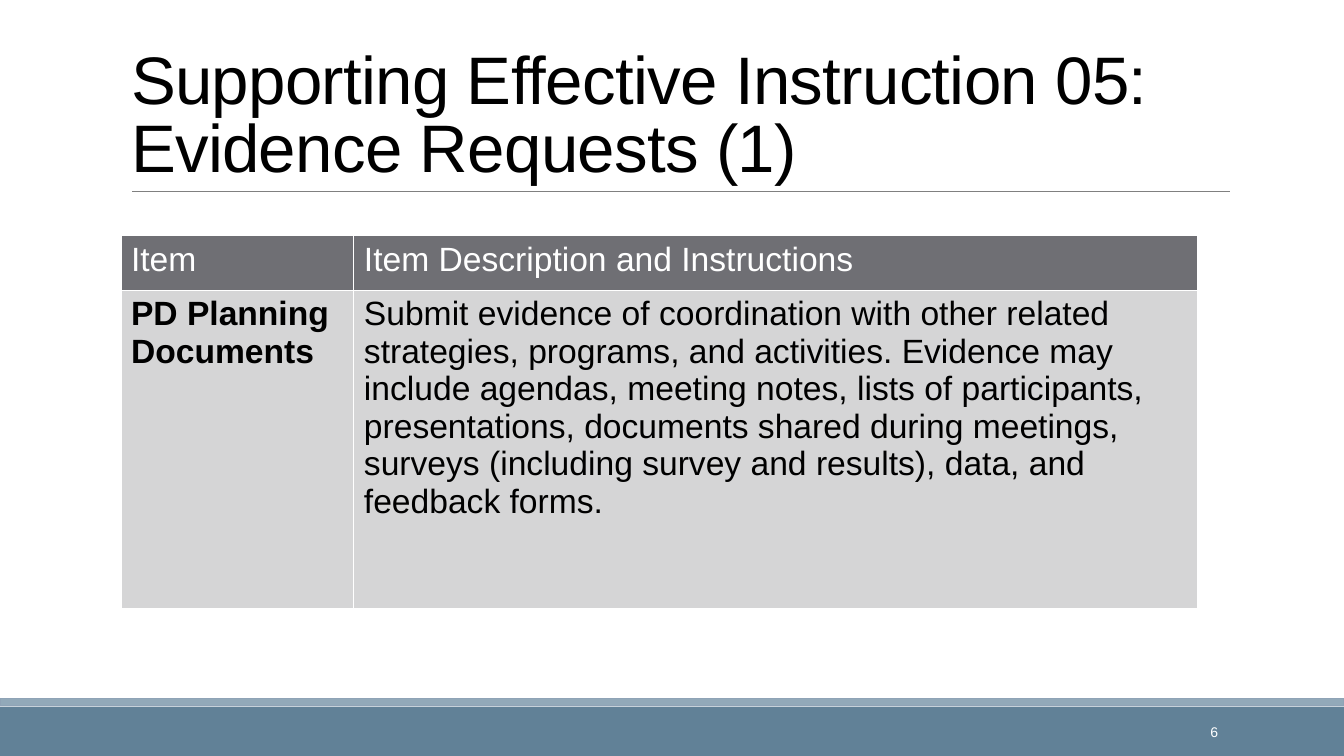
from lxml.etree import SubElement
from pptx import Presentation
from pptx.dml.color import RGBColor
from pptx.enum.shapes import MSO_CONNECTOR as Link, MSO_SHAPE as Shape
from pptx.enum.text import MSO_ANCHOR as Anchor, PP_ALIGN as Align
from pptx.oxml.ns import qn
from pptx.util import Inches, Pt

BLACK = RGBColor(0x00, 0x00, 0x00)
WHITE = RGBColor(0xFF, 0xFF, 0xFF)
BLUE = RGBColor(0x61, 0x81, 0x97)
PALE = RGBColor(0x92, 0xA9, 0xB9)
EDGE = RGBColor(0x8F, 0xA3, 0xB6)
RULE = RGBColor(0x80, 0x80, 0x80)
HEAD = RGBColor(0x6F, 0x6F, 0x74)
BODY = RGBColor(0xD5, 0xD5, 0xD6)

TITLE = "Supporting Effective Instruction 05: Evidence Requests (1)"
COLS = (2.31, 8.37)
ROWS = (0.54, 3.16)
ITEMS = (
    ("Item", "Item Description and Instructions"),
    ("PD Planning Documents",
     "Submit evidence of coordination with other related strategies, "
     "programs, and activities. Evidence may include agendas, meeting notes, "
     "lists of participants, presentations, documents shared during meetings, "
     "surveys (including survey and results), data, and feedback forms."),
)


def add_run(para, text, size, color, bold=False):
    run = para.add_run()
    run.text = text
    font = run.font
    font.name, font.size, font.bold = "Arial", Pt(size), bold
    font.color.rgb = color
    return run


def add_band(slide, top, height, fill, edge=None):
    band = slide.shapes.add_shape(
        Shape.RECTANGLE, 0, Inches(top), Inches(13.33), Inches(height))
    band.shadow.inherit = False
    band.fill.solid()
    band.fill.fore_color.rgb = fill
    if edge:
        band.line.color.rgb = edge
        band.line.width = Pt(1.25)
    else:
        band.line.fill.background()


def add_rule(slide, left, right, top):
    rule = slide.shapes.add_connector(
        Link.STRAIGHT, Inches(left), Inches(top), Inches(right), Inches(top))
    rule.line.color.rgb = RULE
    rule.line.width = Pt(0.5)
    SubElement(rule._element.spPr, qn("a:effectLst"))


def set_title(slide):
    title = slide.shapes.title
    title.left, title.top = Inches(1.2), Inches(0.31)
    title.width, title.height = Inches(11), Inches(1.59)
    frame = title.text_frame
    frame.word_wrap = True
    frame.vertical_anchor = Anchor.BOTTOM
    para = frame.paragraphs[0]
    para.alignment = Align.LEFT
    para.line_spacing = 0.85
    run = add_run(para, TITLE, 48, BLACK)
    run.font._element.set("spc", "-50")


def set_cell(cell, text, fill, color, bold):
    add_run(cell.text_frame.paragraphs[0], text, 24, color, bold)
    # Borders come before the fill in the cell properties
    props = cell._tc.get_or_add_tcPr()
    for side in ("lnL", "lnR", "lnT", "lnB"):
        line = SubElement(props, qn(f"a:{side}"), w=str(Pt(1)))
        solid = SubElement(line, qn("a:solidFill"))
        SubElement(solid, qn("a:srgbClr"), val=str(WHITE))
    cell.fill.solid()
    cell.fill.fore_color.rgb = fill


def add_grid(slide):
    grid = slide.shapes.add_table(
        len(ROWS), len(COLS), Inches(1.2), Inches(2.34),
        Inches(sum(COLS)), Inches(sum(ROWS))).table
    for col, width in zip(grid.columns, COLS):
        col.width = Inches(width)
    for row, height in zip(grid.rows, ROWS):
        row.height = Inches(height)
    for r, texts in enumerate(ITEMS):
        fill, color = (BODY, BLACK) if r else (HEAD, WHITE)
        for c, text in enumerate(texts):
            set_cell(grid.cell(r, c), text, fill, color, r > 0 and c == 0)


def add_number(slide):
    box = slide.shapes.add_textbox(
        Inches(10.74), Inches(7.06), Inches(1.44), Inches(0.4))
    frame = box.text_frame
    frame.word_wrap = True
    frame.vertical_anchor = Anchor.MIDDLE
    para = frame.paragraphs[0]
    para.alignment = Align.RIGHT
    add_run(para, "6", 10, WHITE)


def main():
    deck = Presentation()
    deck.slide_width, deck.slide_height = Inches(13.33), Inches(7.5)
    slide = deck.slides.add_slide(deck.slide_layouts[5])

    # Footer bands and title rule
    add_band(slide, 7.01, 0.49, BLUE)
    add_band(slide, 6.93, 0.07, PALE, EDGE)
    add_rule(slide, 1.31, 12.2, 1.9)

    # Content
    set_title(slide)
    add_grid(slide)
    add_number(slide)
    deck.save("out.pptx")


if __name__ == "__main__":
    main()
